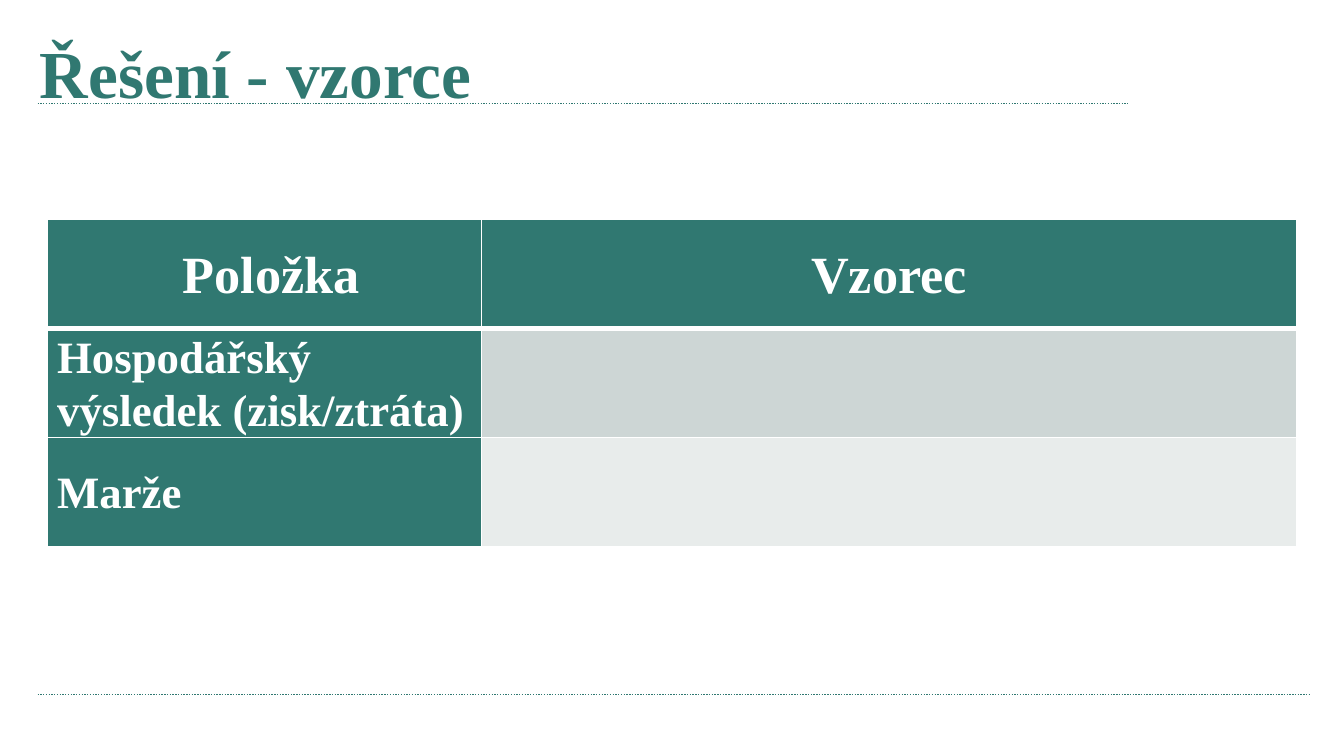
from dataclasses import dataclass

from lxml import etree
from pptx import Presentation
from pptx.dml.color import RGBColor
from pptx.enum import dml, shapes, text
from pptx.oxml import ns
from pptx.util import Cm, Pt


@dataclass(frozen=True)
class Theme:
    font: str = "Times New Roman"
    teal: str = "307871"
    white: str = "FFFFFF"
    dark_band: str = "CDD6D5"
    light_band: str = "E8ECEB"
    title_size: int = 36
    header_size: int = 28
    label_size: int = 24


THEME = Theme()


@dataclass(frozen=True)
class Rule:
    left: float
    right: float
    top: float


@dataclass(frozen=True)
class CellStyle:
    words: str
    fill: str
    size: int = THEME.label_size
    align: text.PP_ALIGN = text.PP_ALIGN.JUSTIFY
    top_border: float = 1
    bottom_border: float = 1


def header(words: str) -> CellStyle:
    return CellStyle(words, THEME.teal, THEME.header_size, text.PP_ALIGN.CENTER, bottom_border=3)


RULES = [Rule(0.71, 21.31, 1.96), Rule(0.71, 24.77, 13.13)]
COLUMN_WIDTHS = [8.2, 15.4]
ROW_HEIGHT = 2.06
ROWS = [
    [header("\u00a0Položka".replace("\u00a0", " ")), header("Vzorec")],
    [CellStyle("Hospodářský výsledek (zisk/ztráta)", THEME.teal, top_border=3),
     CellStyle("", THEME.dark_band, top_border=3)],
    [CellStyle("Marže", THEME.teal), CellStyle("", THEME.light_band)],
]


def set_font(paragraph, size: int, color: str) -> None:
    font = paragraph.font
    font.name = THEME.font
    font.size = Pt(size)
    font.bold = True
    font.color.rgb = RGBColor.from_string(color)


def draw_rule(page, rule: Rule) -> None:
    connector = page.shapes.add_connector(
        shapes.MSO_CONNECTOR.STRAIGHT,
        Cm(rule.left), Cm(rule.top), Cm(rule.right), Cm(rule.top))
    connector.line.color.rgb = RGBColor.from_string(THEME.teal)
    connector.line.width = Pt(0.75)
    connector.line.dash_style = dml.MSO_LINE.ROUND_DOT
    etree.SubElement(connector._element.spPr, ns.qn("a:effectLst"))


def draw_title(page, words: str) -> None:
    title = page.shapes.title
    title.left, title.top, title.width, title.height = Cm(0.5), Cm(0.36), Cm(22.4), Cm(2)
    frame = title.text_frame
    frame.text = words
    frame.vertical_anchor = text.MSO_ANCHOR.MIDDLE
    paragraph = frame.paragraphs[0]
    paragraph.alignment = text.PP_ALIGN.LEFT
    set_font(paragraph, THEME.title_size, THEME.teal)


def add_border(cell, side: str, width: float) -> None:
    border = etree.SubElement(
        cell._tc.get_or_add_tcPr(), ns.qn(f"a:ln{side}"), w=str(int(Pt(width))))
    fill = etree.SubElement(border, ns.qn("a:solidFill"))
    etree.SubElement(fill, ns.qn("a:srgbClr"), val=THEME.white)


def format_cell(cell, style: CellStyle) -> None:
    cell.margin_left = cell.margin_right = Cm(0.18)
    cell.margin_top = cell.margin_bottom = 0
    cell.vertical_anchor = text.MSO_ANCHOR.MIDDLE
    for side, width in [("L", 1), ("R", 1), ("T", style.top_border), ("B", style.bottom_border)]:
        add_border(cell, side, width)
    cell.fill.solid()
    cell.fill.fore_color.rgb = RGBColor.from_string(style.fill)
    cell.text = style.words
    paragraph = cell.text_frame.paragraphs[0]
    paragraph.alignment = style.align
    paragraph.line_spacing = 1.07
    set_font(paragraph, style.size, THEME.white)


def draw_table(page) -> None:
    table = page.shapes.add_table(
        len(ROWS), len(COLUMN_WIDTHS), Cm(0.9), Cm(4.15),
        Cm(sum(COLUMN_WIDTHS)), Cm(ROW_HEIGHT * len(ROWS))).table
    for column, width in zip(table.columns, COLUMN_WIDTHS):
        column.width = Cm(width)
    for row, styles in zip(table.rows, ROWS):
        row.height = Cm(ROW_HEIGHT)
        for cell, style in zip(row.cells, styles):
            format_cell(cell, style)


def main() -> None:
    deck = Presentation()
    deck.slide_width, deck.slide_height = Cm(25.4), Cm(14.29)
    page = deck.slides.add_slide(deck.slide_layouts.get_by_name("Title Only"))
    for rule in RULES:
        draw_rule(page, rule)
    draw_title(page, "Řešení - vzorce")
    draw_table(page)
    deck.save("out.pptx")


if __name__ == "__main__":
    main()
